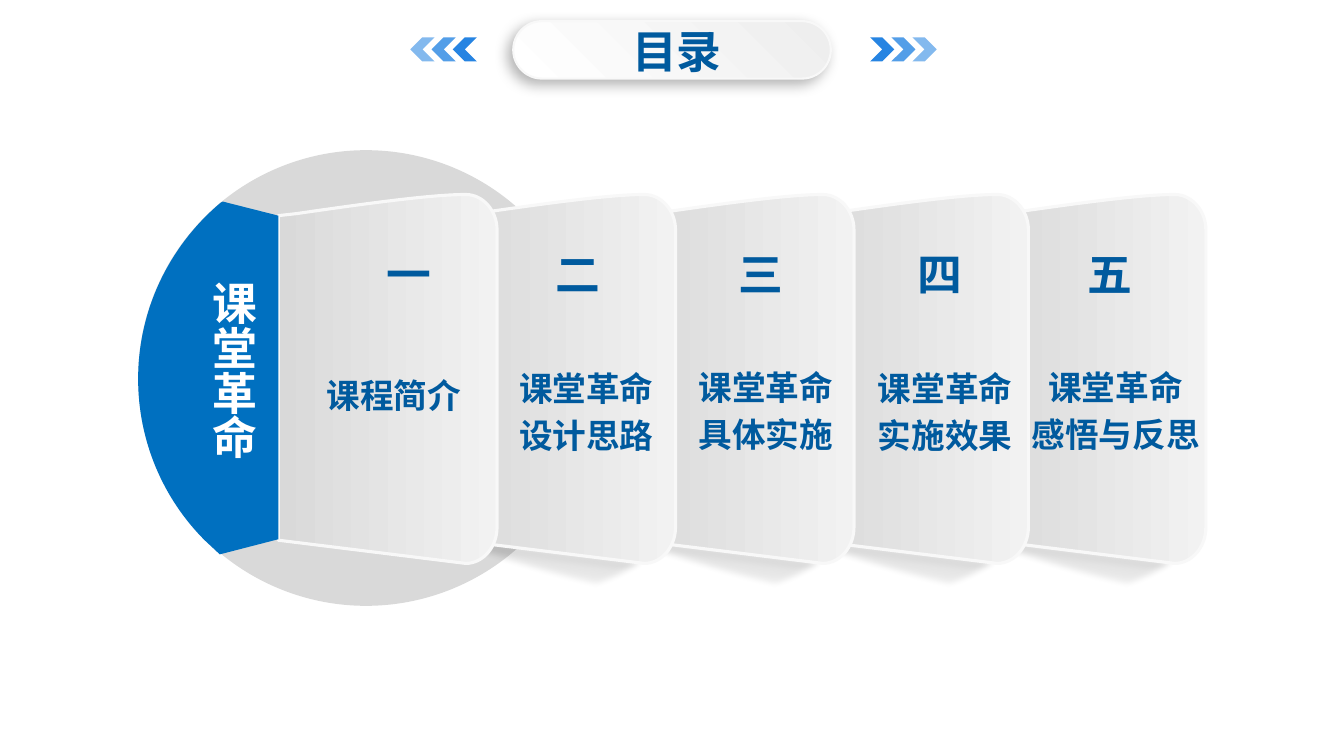
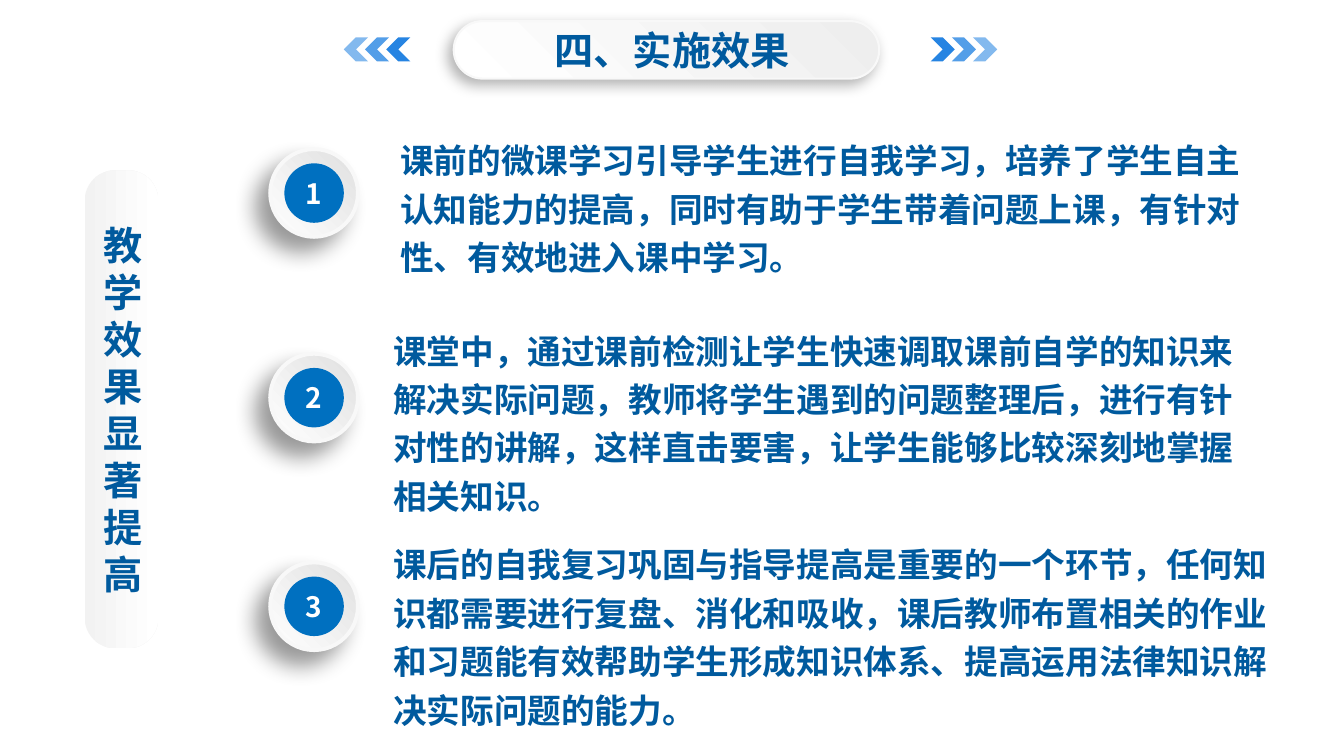
from lxml.etree import SubElement
from pptx import Presentation
from pptx.dml.color import RGBColor
from pptx.enum.shapes import MSO_SHAPE
from pptx.enum.text import MSO_ANCHOR, PP_ALIGN
from pptx.oxml.ns import qn
from pptx.util import Pt

PX = 9144  # 100 px to the inch
BLUE, NAVY, SKY, WHITE = "0070C0", "005A9E", "2684E2", "FFFFFF"
CJK = "Noto Sans CJK SC"
CARD_EDGE = [("D9D9D9", 0), ("F8F8F8", 50), (WHITE, 100)]
PILL_EDGE = [("EEEEEE", 0), ("F8F8F8", 50), (WHITE, 100)]


def paint(shape, fill, angle=0, edge=None, edge_width=0, shadow=None, soft=0):
    """Fill and edge are lists of (hex, position, opacity); shadow is (opacity, blur, distance)."""
    shape.shadow.inherit = False
    properties = shape._element.spPr
    effects = properties.find(qn("a:effectLst"))
    properties.remove(effects)
    parts = [(properties, fill)]
    shape.line.fill.background()
    outline = properties.find(qn("a:ln"))
    properties.remove(outline)
    if edge:
        outline.clear()
        outline.set("w", str(Pt(edge_width)))
        parts.append((outline, edge))
    for parent, stops in parts:
        if len(stops) > 1:
            gradient = SubElement(parent, qn("a:gradFill"), rotWithShape="1")
            stop_list = SubElement(gradient, qn("a:gsLst"))
            SubElement(gradient, qn("a:lin"), ang=str(angle * 60000), scaled="0")
        for colour, position, *opacity in stops:
            if len(stops) > 1:
                holder = SubElement(stop_list, qn("a:gs"), pos=str(position * 1000))
            else:
                holder = SubElement(parent, qn("a:solidFill"))
            node = SubElement(holder, qn("a:srgbClr"), val=colour)
            if opacity:
                SubElement(node, qn("a:alpha"), val=str(opacity[0] * 1000))
    properties.extend([outline, effects])
    if shadow:
        opacity, blur, distance = shadow
        cast = SubElement(effects, qn("a:outerShdw"), blurRad=str(Pt(blur)),
                          dist=str(Pt(distance)), dir=str(135 * 60000),
                          algn="tr", rotWithShape="0")
        node = SubElement(cast, qn("a:srgbClr"), val="000000")
        SubElement(node, qn("a:alpha"), val=str(opacity * 1000))
    if soft:
        SubElement(effects, qn("a:softEdge"), rad=str(Pt(soft)))


def write(shape, text, size, colour=NAVY, font=CJK, align=PP_ALIGN.CENTER,
          anchor=MSO_ANCHOR.TOP, margins=(10, 5), wrap=True, vertical=False,
          line_spacing=None):
    frame = shape.text_frame
    frame.word_wrap = wrap
    frame.vertical_anchor = anchor
    frame.margin_left = frame.margin_right = margins[0] * PX
    frame.margin_top = frame.margin_bottom = margins[1] * PX
    if vertical:
        frame._txBody.bodyPr.set("vert", "eaVert")
    for index, line in enumerate(text.split("\n")):
        para = frame.add_paragraph() if index else frame.paragraphs[0]
        para.alignment = align
        if index:
            para.space_before = Pt(5)
        if line_spacing:
            para.line_spacing = line_spacing
        span = para.add_run()
        span.text = line
        span.font.size = Pt(size)
        span.font.bold = True
        span.font.name = font
        span.font.color.rgb = RGBColor.from_string(colour)
        SubElement(span._r.get_or_add_rPr(), qn("a:ea"), typeface=CJK)


deck = Presentation()
deck.slide_width, deck.slide_height = 1333 * PX, 750 * PX

# Header on every slide: pill, arrows pointing outwards, title
headers = [
    ("目录", 32, "TeX Gyre Adventor", (509, 315), (449, 863), (545, 19, 253, 61)),
    ("四、实施效果", 28, CJK, (450, 422), (383, 923), (477, 22, 379, 54)),
]
pages = []
for title, size, font, (left, width), arrow_lefts, title_area in headers:
    page = deck.slides.add_slide(deck.slide_layouts[6])
    pages.append(page)
    pill = page.shapes.add_shape(MSO_SHAPE.ROUNDED_RECTANGLE,
                                 left * PX, 21 * PX, width * PX, 57 * PX)
    pill.adjustments[0] = 0.5
    paint(pill, [("EEEEEE", 0), (WHITE, 100)], 135, PILL_EDGE, 1.5, (30, 10, 5))
    for start, step, turn in zip(arrow_lefts, (-21, 21), (180, 0)):
        for index, opacity in enumerate((100, 79, 57)):
            arrow = page.shapes.add_shape(MSO_SHAPE.CHEVRON, (start + index * step) * PX,
                                          37 * PX, 24 * PX, 24 * PX)
            arrow.rotation = turn
            paint(arrow, [(SKY, 0, opacity)])
    box = page.shapes.add_textbox(*[value * PX for value in title_area])
    write(box, title, size, font=font, margins=(7, 4))
contents, results = pages

# Contents: grey disc behind the cards
disc = contents.shapes.add_shape(MSO_SHAPE.OVAL, 137 * PX, 149 * PX, 452 * PX, 452 * PX)
paint(disc, [("D9D9D9", 0)])

# Outlines: a pair is a corner, six numbers are a cubic curve
card_outline = [(186, 0), (203, 0, 217, 16, 217, 35), (217, 330),
                (217, 350, 203, 366, 186, 366), (0, 343), (0, 21), (18, 19),
                (87, 9, 152, 0, 186, 0)]
shade_outline = [(0, 0), (73, 13, 177, 36, 250, 43), (272, 32, 281, 25, 312, 1)]
cover_outline = [(84, 0), (139, 14), (139, 335), (81, 350), (66, 336),
                 (25, 295, 0, 238, 0, 176), (0, 106, 32, 43, 82, 1)]
card_style = {"fill": [("D9D9D9", 0), ("F2F2F2", 100)],
              "edge": CARD_EDGE, "edge_width": 2.25}
shade_style = {"angle": 90, "soft": 5, "fill": [
    ("000000", 0, 48), ("000000", 12, 45), ("000000", 28, 25), ("000000", 49, 11),
    ("000000", 66, 6), ("000000", 81, 3), ("000000", 100, 0)]}

pieces = []
for left in (979, 803, 630, 453):
    pieces.append((shade_outline, left - 107, 533, 7, shade_style))
    pieces.append((card_outline, left, 193, 0, card_style))
pieces.append((card_outline, 276, 193, 0, card_style))
pieces.append((cover_outline, 137, 200, 0, {"fill": [(BLUE, 0)]}))

for outline, left, top, turn, style in pieces:
    points = [((left + x) * PX, (top + y) * PX)
              for segment in outline for x, y in zip(segment[::2], segment[1::2])]
    builder = contents.shapes.build_freeform(*points[0], scale=1)
    builder.add_line_segments(points[1:], close=True)
    piece = builder.convert_to_shape()
    piece.rotation = turn
    # Three successive points of a curve become one Bézier segment
    outline_node = next(piece._element.iter(qn("a:path")))
    line_nodes = iter(outline_node.findall(qn("a:lnTo")))
    for segment in outline[1:]:
        node = next(line_nodes)
        if len(segment) == 6:
            node.tag = qn("a:cubicBezTo")
            for extra in (next(line_nodes), next(line_nodes)):
                node.append(extra[0])
                outline_node.remove(extra)
    paint(piece, **style)

# Contents: cover title, numerals and topics
box = contents.shapes.add_textbox(189 * PX, 269 * PX, 74 * PX, 210 * PX)
write(box, "课堂革命", 32, WHITE, vertical=True)
topics = [
    ("一", 360, "课程简介", (314, 367, 153, 50)),
    ("二", 528, "课堂革命\n设计思路", (505, 360, 153, 98)),
    ("三", 709, "课堂革命\n具体实施", (683, 359, 153, 98)),
    ("四", 887, "课堂革命\n实施效果", (861, 360, 153, 98)),
    ("五", 1055, "课堂革命\n感悟与反思", (1013, 359, 187, 98)),
]
for numeral, left, topic, area in topics:
    box = contents.shapes.add_textbox(left * PX, 240 * PX, 91 * PX, 64 * PX)
    write(box, numeral, 32)
    box = contents.shapes.add_textbox(*[value * PX for value in area])
    write(box, topic, 24, font="Arial Narrow", wrap=False)

# Results: numbered points
findings = [
    (148, (382, 131, 879, 186),
     "课前的微课学习引导学生进行自我学习，培养了学生自主认知能力的提高，"
     "同时有助于学生带着问题上课，有针对性、有效地进入课中学习。"),
    (351, (375, 320, 875, 198),
     "课堂中，通过课前检测让学生快速调取课前自学的知识来解决实际问题，"
     "教师将学生遇到的问题整理后，进行有针对性的讲解，这样直击要害，"
     "让学生能够比较深刻地掌握相关知识。"),
    (558, (375, 532, 912, 200),
     "课后的自我复习巩固与指导提高是重要的一个环节，任何知识都需要进行复盘、消化和吸收，"
     "课后教师布置相关的作业和习题能有效帮助学生形成知识体系、"
     "提高运用法律知识解决实际问题的能力。"),
]
for number, (top, area, finding) in enumerate(findings, 1):
    ring = results.shapes.add_shape(MSO_SHAPE.OVAL, 268 * PX, top * PX, 87 * PX, 87 * PX)
    paint(ring, [("E0E0E0", 0), (WHITE, 100)], 135, CARD_EDGE, 2.75, (40, 16, 14))
    badge = results.shapes.add_shape(MSO_SHAPE.OVAL, 282 * PX, (top + 14) * PX,
                                     59 * PX, 59 * PX)
    paint(badge, [(BLUE, 0)])
    write(badge, str(number), 20, WHITE, anchor=MSO_ANCHOR.MIDDLE, margins=(0, 0))
    box = results.shapes.add_textbox(*[value * PX for value in area])
    write(box, finding, 24, align=PP_ALIGN.LEFT, margins=(15, 0), line_spacing=1.2)

# Results: side banner
banner = results.shapes.add_shape(MSO_SHAPE.ROUNDED_RECTANGLE,
                                  84 * PX, 169 * PX, 73 * PX, 474 * PX)
banner.adjustments[0] = 0.41
paint(banner, [("F2F2F2", 0), (WHITE, 99)])
write(banner, "教学效果显著提高", 28, anchor=MSO_ANCHOR.MIDDLE)

deck.save("out.pptx")
